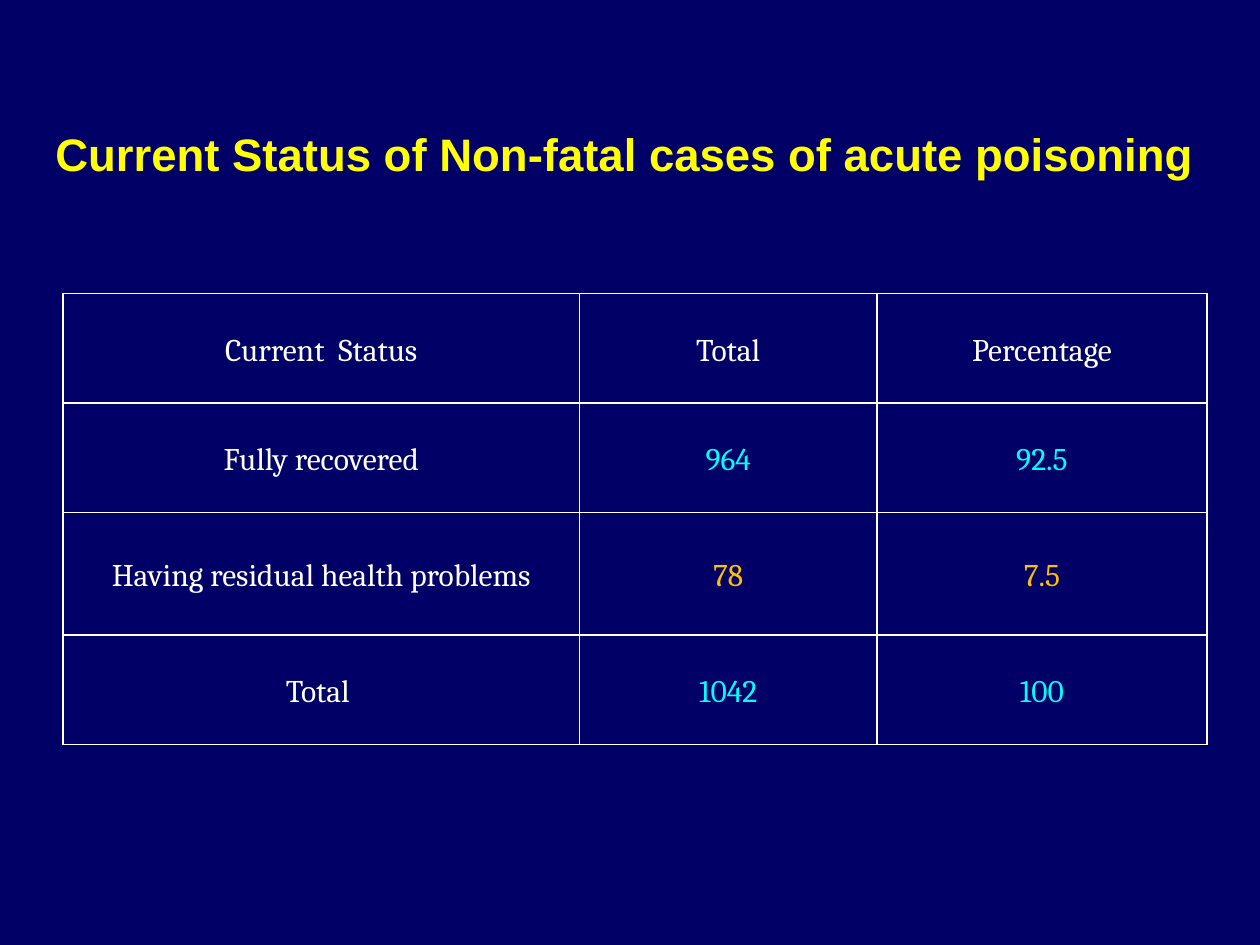
from typing import NamedTuple

from lxml.etree import SubElement
from pptx import Presentation
from pptx.dml.color import RGBColor
from pptx.enum.text import MSO_ANCHOR, PP_ALIGN
from pptx.oxml.ns import qn
from pptx.util import Inches, Pt

NAVY = RGBColor(0x00, 0x00, 0x66)
YELLOW = RGBColor(0xFF, 0xFF, 0x00)
WHITE = RGBColor(0xFF, 0xFF, 0xFF)
CYAN = RGBColor(0x00, 0xFF, 0xFF)
AMBER = RGBColor(0xFF, 0xC0, 0x00)

TITLE_FONT = {"name": "Arial", "size": Pt(26), "bold": True}
CELL_FONT = {"name": "Cambria", "size": Pt(18), "bold": False}
CELL_FORMAT = {
    "vertical_anchor": MSO_ANCHOR.MIDDLE,
    "margin_left": Inches(0.07),
    "margin_right": Inches(0.07),
    "margin_top": 0,
    "margin_bottom": 0,
}
COLUMN_WIDTHS = (4.1, 2.36, 2.62)


class StatusRow(NamedTuple):
    status: str
    total: str
    percentage: str
    figure_color: RGBColor
    height: float = 0.87


STATUS_ROWS = (
    StatusRow("Current  Status", "Total", "Percentage", WHITE),
    StatusRow("Fully recovered", "964", "92.5", CYAN),
    StatusRow("Having residual health problems", "78", "7.5", AMBER, 0.97),
    StatusRow("Total ", "1042", "100", CYAN),
)


def apply_format(target, values: dict) -> None:
    for attribute, value in values.items():
        setattr(target, attribute, value)


def add_borders(cell, color: RGBColor, width: Pt) -> None:
    properties = cell._tc.get_or_add_tcPr()
    for index, side in enumerate(("lnL", "lnR", "lnT", "lnB")):
        line = SubElement(properties, qn(f"a:{side}"), w=str(int(width)))
        fill = SubElement(line, qn("a:solidFill"))
        SubElement(fill, qn("a:srgbClr"), val=str(color))
        properties.insert(index, line)  # borders must precede the cell fill


def write_cell(cell, text: str, color: RGBColor) -> None:
    cell.text = text
    apply_format(cell, CELL_FORMAT)
    cell.fill.background()
    add_borders(cell, WHITE, Pt(1))
    paragraph = cell.text_frame.paragraphs[0]
    apply_format(paragraph, {"alignment": PP_ALIGN.CENTER, "line_spacing": 1.15})
    font = paragraph.runs[0].font
    apply_format(font, CELL_FONT)
    font.color.rgb = color


def add_title(slide, text: str) -> None:
    title = slide.shapes.title
    apply_format(title, {"left": Inches(0.17), "top": Inches(1),
                         "width": Inches(9.58), "height": Inches(0.83)})
    frame = title.text_frame
    frame.text = text
    apply_format(frame, {"vertical_anchor": MSO_ANCHOR.TOP, "margin_top": 0,
                         "word_wrap": True})
    paragraph = frame.paragraphs[0]
    paragraph.alignment = PP_ALIGN.CENTER
    font = paragraph.runs[0].font
    apply_format(font, TITLE_FONT)
    font.color.rgb = YELLOW


def add_status_table(slide) -> None:
    table = slide.shapes.add_table(
        len(STATUS_ROWS), len(COLUMN_WIDTHS), Inches(0.5), Inches(2.33),
        Inches(sum(COLUMN_WIDTHS)), Inches(sum(row.height for row in STATUS_ROWS)),
    ).table
    apply_format(table, {"first_row": False, "horz_banding": False})
    for column, width in zip(table.columns, COLUMN_WIDTHS):
        column.width = Inches(width)
    for table_row, row in zip(table.rows, STATUS_ROWS):
        table_row.height = Inches(row.height)
        texts = (row.status, row.total, row.percentage)
        colors = (WHITE, row.figure_color, row.figure_color)
        for cell, text, color in zip(table_row.cells, texts, colors):
            write_cell(cell, text, color)


def main() -> None:
    presentation = Presentation()
    apply_format(presentation, {"slide_width": Inches(10), "slide_height": Inches(7.5)})
    title_only = presentation.slide_layouts.get_by_name("Title Only")
    slide = presentation.slides.add_slide(title_only)
    background = slide.background.fill
    background.solid()
    background.fore_color.rgb = NAVY
    add_title(slide, "Current Status of Non-fatal cases of acute poisoning")
    add_status_table(slide)
    presentation.save("out.pptx")


if __name__ == "__main__":
    main()
